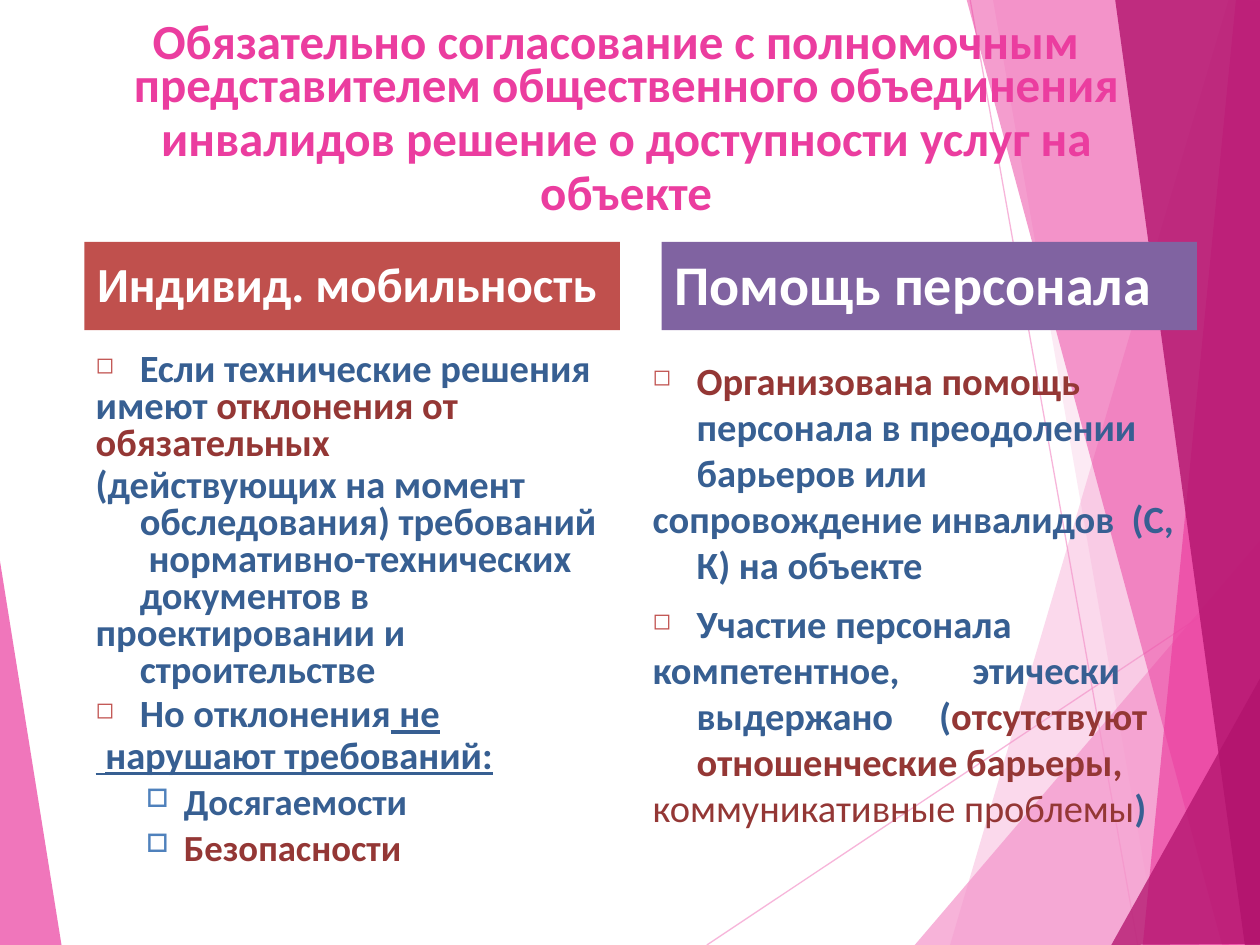
from lxml import etree
from pptx import Presentation
from pptx.dml.color import RGBColor
from pptx.enum import shapes, text
from pptx.oxml.ns import qn
from pptx.util import Inches, Pt

PINK = RGBColor(0xEB, 0x3D, 0x9F)
PALE = RGBColor(0xF4, 0x96, 0xCB)
PLUM = RGBColor(0xB2, 0x13, 0x6D)
RED = RGBColor(0xC0, 0x50, 0x4D)
VIOLET = RGBColor(0x80, 0x63, 0xA1)
BLUE = RGBColor(0x37, 0x5F, 0x92)
SKY = RGBColor(0x4F, 0x81, 0xBC)
WINE = RGBColor(0x94, 0x37, 0x35)
WHITE = RGBColor(0xFF, 0xFF, 0xFF)

# Backdrop: thin lines, then facets (colour, opacity %, corners)
RAYS = [((5.61, 7.5), (10.01, 4.57)), ((7.7, 0), (9.03, 7.5))]
FACETS = [
    (PALE, 36, [(9.75, 0), (7.54, 7.5), (10.02, 7.51), (10.01, 0.01)]),
    (PALE, 20, [(7.88, -0.01), (9.19, 7.5), (10.01, 7.5), (10.01, -0.01)]),
    (PALE, 72, [(7.26, 7.5), (10, 4.29), (10.01, 7.5)]),
    (PINK, 50, [(7.67, -0.01), (9.7, 7.5), (10.01, 7.49), (10.01, -0.01)]),
    (PINK, 66, [(9.81, -0.01), (9.07, 7.5), (10.01, 7.5), (10, -0.01)]),
    (PLUM, 80, [(8.85, -0.01), (9.88, 7.5), (10.02, 7.5), (10, -0.01)]),
    (PLUM, 76, [(8.82, 7.5), (10.02, 5.35), (10.02, 7.49)]),
    (PINK, 70, [(-0.01, 4.39), (0.49, 7.51), (-0.01, 7.5)]),
]

# Paragraph kinds: left margin, first-line indent, extras
HEAD = dict(left=0.01, first=0, size=28, align=text.PP_ALIGN.CENTER)
BAND = dict(left=0.1, first=0)
BODY = dict(left=0.36, first=-0.35, size=22)
ITEM = dict(BODY, mark=("◻", RED, 59))
SUB = dict(left=0.71, first=-0.3, size=21, level=1, before=1, mark=("□", SKY, 69))
EVEN = dict(BODY, align=text.PP_ALIGN.JUSTIFY)
TIGHT, LOOSE = Pt(21.1), Pt(23.8)

# Text: (paragraph format, runs); run = (words, colour, font changes)
TITLE = [(dict(HEAD, before=1), [("Обязательно согласование с полномочным", PINK)])]
TOPIC = [
    (dict(HEAD, before=1, lead=Pt(30.9)),
     [("представителем общественного объединения", PINK)]),
    (dict(HEAD, lead=Pt(30.9)),
     [("инвалидов решение о доступности услуг на объекте", PINK)]),
]
LEFT = [
    (dict(ITEM, before=1, lead=LOOSE), [("Если технические решения", BLUE)]),
    (dict(BODY, lead=TIGHT), [("имеют ", BLUE), ("отклонения от", WINE)]),
    (dict(BODY, lead=TIGHT), [("обязательных", WINE)]),
    (dict(BODY, before=2.6, lead=0.8),
     [("(действующих на момент  обследования) требований  "
       "нормативно-технических  документов в", BLUE)]),
    (dict(BODY, lead=0.8), [("проектировании и  строительстве", BLUE)]),
    (dict(ITEM, before=1.8, lead=LOOSE),
     [("Но отклонения", BLUE), (" не", BLUE, dict(underline=True))]),
    (dict(BODY, lead=LOOSE),
     [(" ", BLUE, dict(name="Times New Roman", bold=False, underline=True)),
      ("нарушают требований:", BLUE, dict(underline=True))]),
    (SUB, [("Досягаемости", BLUE)]),
    (SUB, [("Безопасности", WINE)]),
]
RIGHT = [
    (dict(ITEM, before=1),
     [("Организована помощь ", WINE),
      (" персонала в преодолении  барьеров или", BLUE)]),
    (BODY, [("сопровождение инвалидов  (С, К) на объекте", BLUE)]),
    (dict(ITEM, before=7), [("Участие персонала", BLUE)]),
    (EVEN, [("компетентное, этически  выдержано (", BLUE),
            ("отсутствуют  отношенческие барьеры,", WINE)]),
    (EVEN, [("коммуникативные проблемы", WINE, dict(bold=False)), (")", BLUE)]),
]
BOXES = [
    ((0.67, 0.07, 8.42, 0.49), TITLE),
    ((0.6, 0.45, 8.73, 1.32), TOPIC),
    ((0.75, 2.76, 4.01, 4.15), LEFT),
    ((5.17, 2.82, 4.3, 3.79), RIGHT),
]
# Bands: left, fill, top inset, paragraph
BANDS = [
    (0.67, RED, 0.09,
     (dict(BAND, size=28, before=6.6), [("Индивид. мобильность", WHITE)])),
    (5.25, VIOLET, 0.06,
     (dict(BAND, size=32, before=4), [("Помощь персонала", WHITE)])),
]


def fade(fill, pct):
    clr = fill._xPr.find(".//" + qn("a:srgbClr"))
    etree.SubElement(clr, qn("a:alpha"), val=str(pct * 1000))


def bullet(props, sign, color, pct):
    clr = etree.SubElement(props, qn("a:buClr"))
    etree.SubElement(clr, qn("a:srgbClr"), val=str(color))
    etree.SubElement(props, qn("a:buSzPct"), val=str(pct * 1000))
    etree.SubElement(props, qn("a:buChar"), char=sign)


def write(shape, paras, top=0.01):
    frame = shape.text_frame
    frame.word_wrap = True
    frame.vertical_anchor = text.MSO_ANCHOR.TOP
    frame.margin_left = frame.margin_right = frame.margin_bottom = 0
    frame.margin_top = Inches(top)
    for i, (form, runs) in enumerate(paras):
        para = frame.add_paragraph() if i else frame.paragraphs[0]
        para.alignment = form.get("align", text.PP_ALIGN.LEFT)
        para.level = form.get("level", 0)
        para.space_before = Pt(form.get("before", 0))
        para.line_spacing = form.get("lead", 1.0)
        props = para._p.get_or_add_pPr()
        props.set("marL", str(Inches(form["left"])))
        props.set("indent", str(Inches(form["first"])))
        if "mark" in form:
            bullet(props, *form["mark"])
        for words, color, *more in runs:
            run = para.add_run()
            run.text = words
            font = run.font
            font.name, font.size, font.bold = "Calibri", Pt(form["size"]), True
            font.color.rgb = color
            for key, val in (more[0] if more else {}).items():
                setattr(font, key, val)


deck = Presentation()
deck.slide_width, deck.slide_height = Inches(10), Inches(7.5)
slide = deck.slides.add_slide(deck.slide_layouts[6])
parts = slide.shapes

# Backdrop
for start, end in RAYS:
    ray = parts.add_connector(shapes.MSO_CONNECTOR.STRAIGHT,
                              *map(Inches, start + end))
    ray.line.width = Pt(0.75)
    ray.line.color.rgb = PALE
    fade(ray.line.fill, 70)
    etree.SubElement(ray._element.spPr, qn("a:effectLst"))
for color, pct, spots in FACETS:
    spots = [(Inches(x), Inches(y)) for x, y in spots]
    pen = parts.build_freeform(*spots[0])
    pen.add_line_segments(spots[1:], close=True)
    facet = pen.convert_to_shape()
    facet.shadow.inherit = False
    facet.fill.solid()
    facet.fill.fore_color.rgb = color
    fade(facet.fill, pct)
    facet.line.fill.background()

# Headings and columns
for area, paras in BOXES:
    write(parts.add_textbox(*map(Inches, area)), paras)

# Column bands
for left, color, top, para in BANDS:
    band = parts.add_shape(shapes.MSO_SHAPE.RECTANGLE,
                           *map(Inches, (left, 1.92, 4.25, 0.7)))
    band.shadow.inherit = False
    band.fill.solid()
    band.fill.fore_color.rgb = color
    band.line.fill.background()
    write(band, [para], top)

deck.save("out.pptx")
